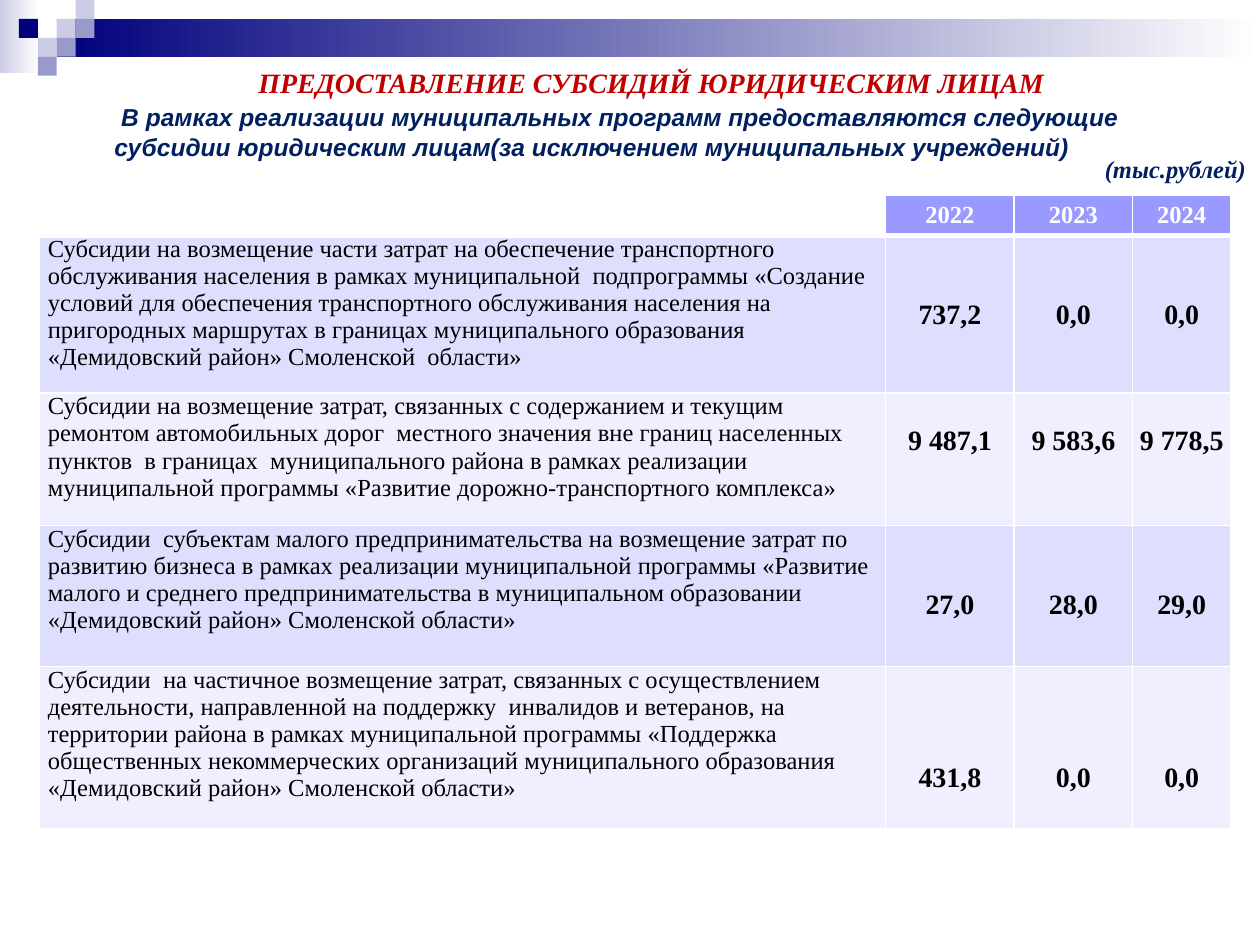
from lxml import etree
from pptx import Presentation
from pptx.dml.color import RGBColor
from pptx.enum import shapes, text
from pptx.oxml.ns import qn
from pptx.util import Inches, Pt

SERIF, SANS = "Times New Roman", "Arial"
NAVY, RED, BLUE = "00007D", "C00000", "002060"
PALE, MID, WHITE = "CCCCE6", "9999CC", "FFFFFF"
HEAD, BANDS = "9999FF", ("DEDEFF", "EFEFFF")

# Gradient bars: left, top, width, height, first colour
BARS = [(0, 0, 0.31, 0.58, PALE), (0.45, 0.15, 9.55, 0.3, NAVY)]
# Small squares: column, row, colour
UNIT = 0.15
TILES = [(3, 1, PALE), (4, 0, PALE), (4, 1, MID), (2, 2, PALE),
         (1, 1, NAVY), (3, 2, MID), (2, 3, MID)]

# Words, size, face, colour, space before
TITLE = [
    ("ПРЕДОСТАВЛЕНИЕ СУБСИДИЙ ЮРИДИЧЕСКИМ ЛИЦАМ", 16, SERIF, RED, 0),
    (" В рамках реализации муниципальных программ предоставляются следующие",
     14, SANS, BLUE, 1.7),
    ("субсидии юридическим лицам(за исключением муниципальных учреждений)",
     14, SANS, BLUE, 0.3),
]
UNITS = "(тыс.рублей)"

YEARS = ["", "2022", "2023", "2024"]
# Purpose, values, lines the values are lowered by
ROWS = [
    ("Субсидии на возмещение части затрат на обеспечение транспортного "
     "обслуживания населения в рамках муниципальной  подпрограммы «Создание "
     "условий для обеспечения транспортного обслуживания населения на "
     "пригородных маршрутах в границах муниципального образования "
     "«Демидовский район» Смоленской  области»",
     ["737,2", "0,0", "0,0"], 2),
    ("Субсидии на возмещение затрат, связанных с содержанием и текущим "
     "ремонтом автомобильных дорог  местного значения вне границ населенных "
     "пунктов  в границах  муниципального района в рамках реализации "
     "муниципальной программы «Развитие дорожно-транспортного комплекса»",
     ["9 487,1", "9 583,6", "9 778,5"], 1),
    ("Субсидии  субъектам малого предпринимательства на возмещение затрат по "
     "развитию бизнеса в рамках реализации муниципальной программы «Развитие "
     "малого и среднего предпринимательства в муниципальном образовании "
     "«Демидовский район» Смоленской области»",
     ["27,0", "28,0", "29,0"], 2),
    ("Субсидии  на частичное возмещение затрат, связанных с осуществлением "
     "деятельности, направленной на поддержку  инвалидов и ветеранов, на "
     "территории района в рамках муниципальной программы «Поддержка "
     "общественных некоммерческих организаций муниципального образования "
     "«Демидовский район» Смоленской области»",
     ["431,8", "0,0", "0,0"], 3),
]
WIDTHS = [6.72, 1.02, 0.94, 0.78]
HEIGHTS = [0.32, 1.25, 1.05, 1.12, 1.29]
LINE = 0.25


def rgb(code):
    return RGBColor.from_string(code)


def style(para, size, face, color, bold=True, slant=False):
    for run in para.runs:
        font = run.font
        font.size, font.name, font.bold, font.italic = Pt(size), face, bold, slant
        font.color.rgb = rgb(color)


def block(slide, *box):
    """Add a plain rectangle without line or shadow."""
    rect = slide.shapes.add_shape(shapes.MSO_SHAPE.RECTANGLE, *map(Inches, box))
    rect.shadow.inherit = False
    rect.line.fill.background()
    return rect


def edge(cell, foot):
    """Draw white borders, the bottom one with the width foot."""
    props = cell._tc.get_or_add_tcPr()
    for spot, (side, width) in enumerate(
            [("lnL", 1), ("lnR", 1), ("lnT", 1), ("lnB", foot)]):
        line = etree.Element(qn("a:" + side), w=str(Pt(width)))
        fill = etree.SubElement(line, qn("a:solidFill"))
        etree.SubElement(fill, qn("a:srgbClr"), val=WHITE)
        props.insert(spot, line)


def put(cell, words, size, color, fill, pads=None, bold=True, foot=1):
    cell.text_frame.text = words
    para = cell.text_frame.paragraphs[0]
    if bold:
        para.alignment = text.PP_ALIGN.CENTER
    style(para, size, SERIF, color, bold)
    if pads:
        side, top = pads
        cell.margin_left = cell.margin_right = Inches(side)
        cell.margin_top, cell.margin_bottom = Inches(top), 0
    if fill:
        cell.fill.solid()
        cell.fill.fore_color.rgb = rgb(fill)
    else:
        cell.fill.background()
    edge(cell, foot)


def decor(slide):
    for *box, color in BARS:
        fill = block(slide, *box).fill
        fill.gradient()
        fill.gradient_angle = 0
        for stop, tone in zip(fill.gradient_stops, (color, WHITE)):
            stop.color.rgb = rgb(tone)
    for col, row, color in TILES:
        fill = block(slide, col * UNIT, row * UNIT, UNIT, UNIT).fill
        fill.solid()
        fill.fore_color.rgb = rgb(color)


def grid(slide):
    frame = slide.shapes.add_table(
        len(HEIGHTS), len(WIDTHS), Inches(0.31), Inches(1.55),
        Inches(sum(WIDTHS)), Inches(sum(HEIGHTS)))
    table = frame.table
    table.first_row = table.horz_banding = False
    for col, width in zip(table.columns, WIDTHS):
        col.width = Inches(width)
    for row, height in zip(table.rows, HEIGHTS):
        row.height = Inches(height)
    for col, year in enumerate(YEARS):
        put(table.cell(0, col), year, 14, WHITE, HEAD if year else None,
            (0.1, 0.05 if year else 0), foot=3)
    for row, (label, values, drop) in enumerate(ROWS, 1):
        band = BANDS[(row - 1) % 2]
        put(table.cell(row, 0), label, 14, "000000", band, (0.07, 0), False)
        for col, value in enumerate(values, 1):
            put(table.cell(row, col), value, 16, "000000", band,
                (0.01, 0.01 + drop * LINE))


def titles(slide):
    box = slide.shapes.add_textbox(*map(Inches, (0.31, 0.47, 9.22, 0.91)))
    frame = box.text_frame
    frame.word_wrap = True
    frame.text = "\n".join(item[0] for item in TITLE)
    for para, (_, size, face, color, gap) in zip(frame.paragraphs, TITLE):
        style(para, size, face, color, slant=True)
        para.space_before = Pt(gap)
        para._p.get_or_add_pPr().set("indent", str(Inches(0.5)))
    frame.paragraphs[0].alignment = text.PP_ALIGN.CENTER

    note = slide.shapes.add_textbox(*map(Inches, (8.67, 1.17, 1.33, 0.34)))
    note.text_frame.word_wrap = False
    note.text_frame.text = UNITS
    style(note.text_frame.paragraphs[0], 14, SERIF, BLUE, slant=True)


def main():
    deck = Presentation()
    deck.slide_width, deck.slide_height = Inches(10), Inches(7.5)
    slide = deck.slides.add_slide(deck.slide_layouts[6])
    decor(slide)
    grid(slide)
    titles(slide)
    deck.save("out.pptx")


if __name__ == "__main__":
    main()
